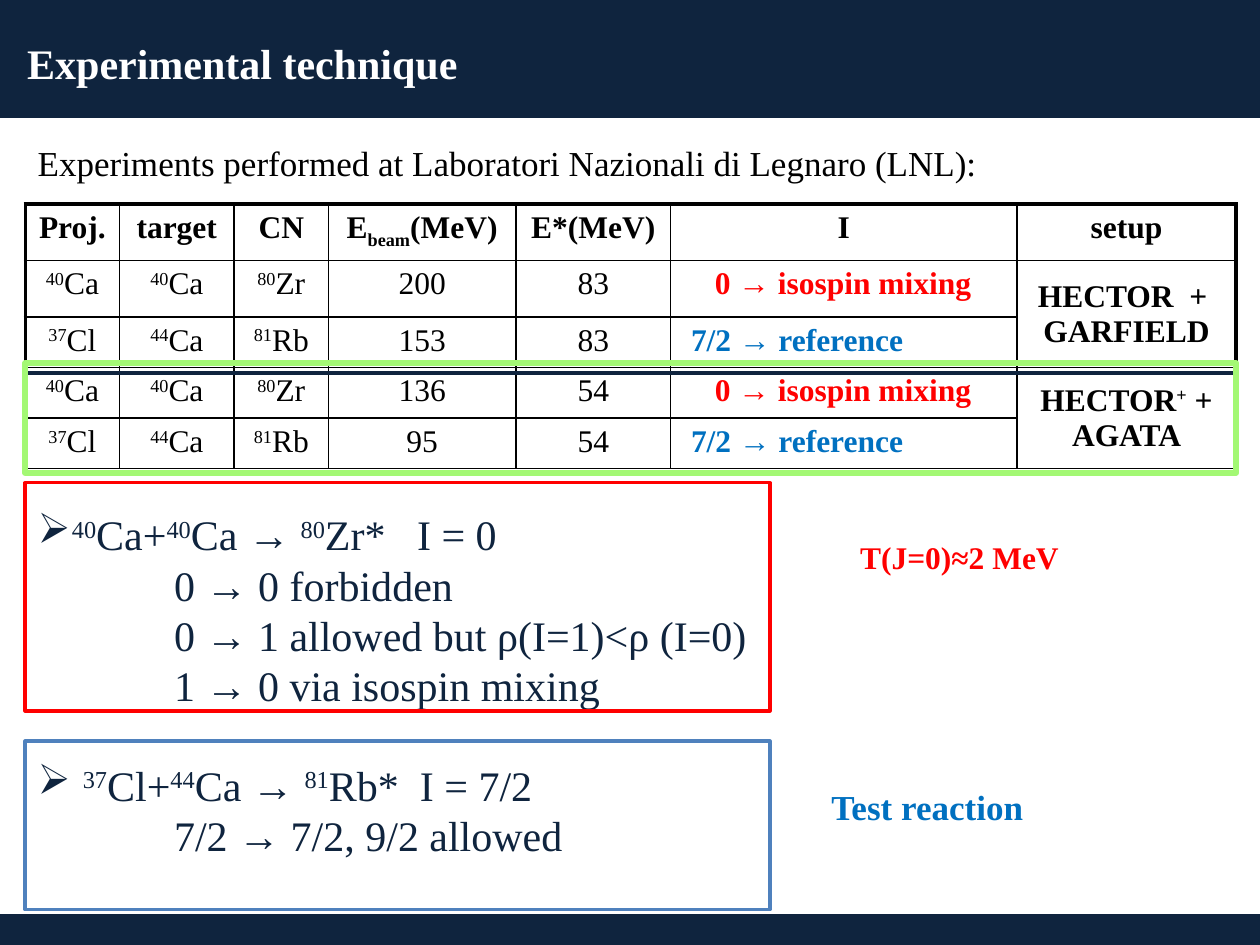
from lxml import etree
from pptx import Presentation
from pptx.dml.color import RGBColor
from pptx.enum import shapes, text
from pptx.oxml.ns import qn
from pptx.util import Cm, Pt

NAVY = RGBColor(0x0F, 0x24, 0x3E)
WHITE = RGBColor(0xFF, 0xFF, 0xFF)
BLACK = RGBColor(0, 0, 0)
RED = RGBColor(0xFF, 0, 0)
BLUE = RGBColor(0, 0x70, 0xC0)
STEEL = RGBColor(0x4F, 0x81, 0xBD)
GREEN = RGBColor(0xA3, 0xF8, 0x74)
FONT = "Times New Roman"
BASELINES = {"^": "30000", "_": "-25000"}

LEFT = 0.51
TABLE_WIDTH = 24.41
REACTION_WIDTH = 15.01
COLUMNS = [1.9, 2.31, 1.9, 3.78, 3.12, 6.98, 4.42]
ROWS = [1.14, 1.14, 1.02, 1.02, 1.02]
HEADINGS = ["Proj.", "target", "CN", "E|_beam|(MeV)", "E*(MeV)", "I", "setup"]
CALCIUM = ["^40|Ca", "^40|Ca", "^80|Zr"]
CHLORINE = ["^37|Cl", "^44|Ca", "^81|Rb"]
MIXING = "0 → isospin mixing"
REFERENCE = "7/2 → reference"
EXPERIMENTS = [
    CALCIUM + ["200", "83", MIXING, "HECTOR  +  GARFIELD"],
    CHLORINE + ["153", "83", REFERENCE, ""],
    CALCIUM + ["136", "54", MIXING, "HECTOR|^+| + AGATA"],
    CHLORINE + ["95", "54", REFERENCE, ""],
]
ISOSPIN_COLUMN, SETUP_COLUMN = 5, 6
ISOSPIN_STYLES = {MIXING: (RED, 0.89), REFERENCE: (BLUE, 0.41)}

# Reaction, text indent after its bullet, space before, transitions
REACTIONS = [
    ("^40|Ca+|^40|Ca → |^80|Zr*   I = 0", 0.69, 0,
     ["0 → 0 forbidden", "0 → 1 allowed but ρ(I=1)<ρ (I=0)",
      "1 → 0 via isospin mixing"]),
    ("^37|Cl+|^44|Ca → |^81|Rb*  I = 7/2", 0.91, 28,
     ["7/2 → 7/2, 9/2 allowed"]),
]


def write(paragraph, marked, size, color, bold=False):
    """Write pieces parted by |; ^ starts a superscript and _ a subscript."""
    font = paragraph.font
    font.name, font.size, font.bold = FONT, Pt(size), bold
    font.color.rgb = color
    for piece in marked.split("|"):
        run = paragraph.add_run()
        run.text = piece.lstrip("^_")
        if piece[:1] in BASELINES:
            run._r.get_or_add_rPr().set("baseline", BASELINES[piece[0]])


def add_box(slide, left, top, width, height, line, weight, fill=None):
    box = slide.shapes.add_shape(shapes.MSO_SHAPE.RECTANGLE,
                                 Cm(left), Cm(top), Cm(width), Cm(height))
    box.shadow.inherit = False
    box.line.color.rgb = line
    box.line.width = Pt(weight)
    if fill is None:
        box.fill.background()
    else:
        box.fill.solid()
        box.fill.fore_color.rgb = fill


def add_frame(slide, left, top, width, height):
    frame = slide.shapes.add_textbox(Cm(left), Cm(top), Cm(width), Cm(height)).text_frame
    frame.word_wrap = True
    return frame


def add_label(slide, left, top, width, height, words, size, color, bold=True):
    frame = add_frame(slide, left, top, width, height)
    write(frame.paragraphs[0], words, size, color, bold)


def set_borders(cell, weights):
    properties = cell._tc.get_or_add_tcPr()
    for side, weight in weights.items():
        line = etree.SubElement(properties, qn(f"a:ln{side}"), w=str(Pt(weight)))
        fill = etree.SubElement(line, qn("a:solidFill"))
        etree.SubElement(fill, qn("a:srgbClr"), val=str(BLACK))


def add_experiments(slide):
    table = slide.shapes.add_table(len(ROWS), len(COLUMNS), Cm(LEFT), Cm(4.11),
                                   Cm(TABLE_WIDTH), Cm(sum(ROWS))).table
    table.first_row = table.horz_banding = False
    for column, width in zip(table.columns, COLUMNS):
        column.width = Cm(width)
    for row, height in zip(table.rows, ROWS):
        row.height = Cm(height)
    for top in (1, 3):
        table.cell(top, SETUP_COLUMN).merge(table.cell(top + 1, SETUP_COLUMN))

    for r, entries in enumerate([HEADINGS] + EXPERIMENTS):
        for c, entry in enumerate(entries):
            cell = table.cell(r, c)
            set_borders(cell, {"L": 2.25 if c == 0 else 1,
                               "R": 2.25 if c == SETUP_COLUMN else 1,
                               "T": 2.25 if r == 0 else 1,
                               "B": 1})
            cell.fill.background()
            if not entry:
                continue
            paragraph = cell.text_frame.paragraphs[0]
            paragraph.space_before = Pt(3.6)
            color = BLACK
            if entry in ISOSPIN_STYLES:
                color, margin = ISOSPIN_STYLES[entry]
                cell.margin_left = Cm(margin)
            else:
                paragraph.alignment = text.PP_ALIGN.CENTER
            if r and c == SETUP_COLUMN:
                cell.vertical_anchor = text.MSO_ANCHOR.MIDDLE
            write(paragraph, entry, 18, color, r == 0 or c >= ISOSPIN_COLUMN)


def indent(paragraph, margin, bullet=None):
    properties = paragraph._p.get_or_add_pPr()
    properties.set("marL", str(Cm(margin)))
    if bullet:
        properties.set("indent", str(-Cm(margin)))
        mark = etree.Element(qn("a:buChar"), char=bullet)
        properties.find(qn("a:defRPr")).addprevious(mark)


def add_reactions(slide):
    frame = add_frame(slide, LEFT, 10.13, 17.15, 7.44)
    paragraph = frame.paragraphs[0]
    for reaction, margin, gap, transitions in REACTIONS:
        if gap:
            paragraph = frame.add_paragraph()
            paragraph.space_before = Pt(gap)
        write(paragraph, reaction, 24, NAVY)
        indent(paragraph, margin, "➢")
        for transition in transitions:
            paragraph = frame.add_paragraph()
            write(paragraph, transition, 24, NAVY)
            indent(paragraph, 2.75)


def main():
    deck = Presentation()
    deck.slide_width, deck.slide_height = Cm(25.4), Cm(19.05)
    slide = deck.slides.add_slide(deck.slide_layouts[6])

    add_box(slide, 0, 0, 25.4, 2.34, NAVY, 2, NAVY)
    add_label(slide, 0.3, 0.64, 21.41, 1.27, "Experimental technique", 24, WHITE)
    add_box(slide, 0, 18.44, 25.4, 0.61, NAVY, 0.75, NAVY)

    add_experiments(slide)
    add_label(slide, LEFT, 2.72, 20.4, 1.12,
              "Experiments performed at Laboratori Nazionali di Legnaro (LNL):",
              20, BLACK, bold=False)
    add_box(slide, LEFT, 7.52, TABLE_WIDTH, 2.01, NAVY, 2)
    add_box(slide, LEFT, 7.32, TABLE_WIDTH, 2.21, GREEN, 3.5)

    add_reactions(slide)
    add_box(slide, LEFT, 9.73, REACTION_WIDTH, 4.6, RED, 2)
    add_box(slide, LEFT, 14.94, REACTION_WIDTH, 3.4, STEEL, 2)
    add_label(slide, 16.51, 15.72, 7.19, 1.12, "Test reaction", 20, BLUE)
    add_label(slide, 17.09, 10.72, 5.79, 1.02, "T(J=0)≈2 MeV", 18, RED)

    deck.save("out.pptx")


if __name__ == "__main__":
    main()
